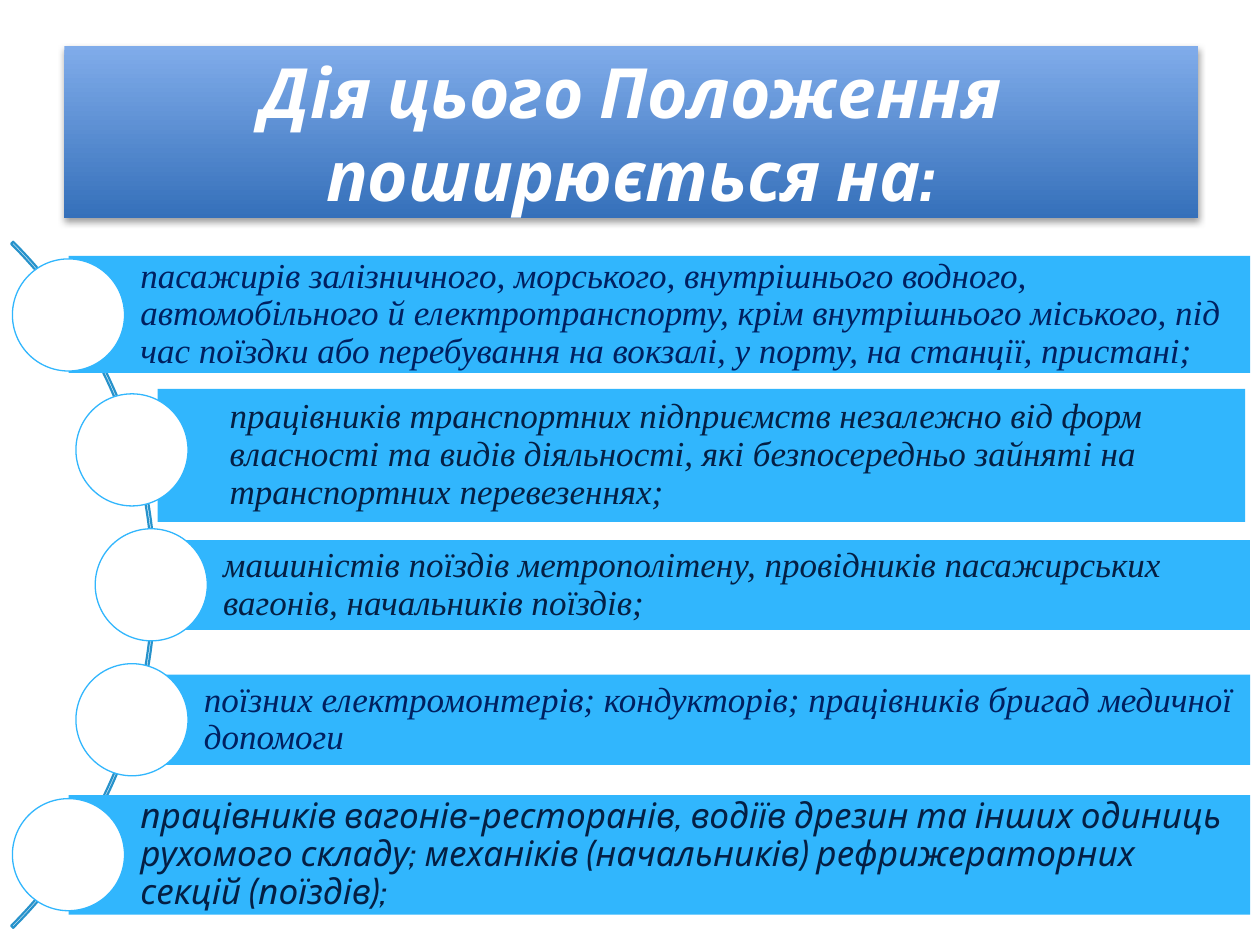
from math import sqrt

from lxml.etree import SubElement
from pptx import Presentation
from pptx.dml.color import RGBColor
from pptx.enum.shapes import MSO_SHAPE as Shape
from pptx.enum.text import MSO_ANCHOR as Anchor, MSO_AUTO_SIZE as AutoSize, PP_ALIGN as Align
from pptx.oxml.ns import qn
from pptx.util import Cm, Pt

TITLE = "Дія цього Положення поширюється на:"
NAVY, DARK = "002060", "041F44"
SERIF, SANS = "Times New Roman", "Cabin"
BLUE, WHITE = "31B6FD", "FFFFFF"

# Text, font, colour, bar top and height in cm
GROUPS = [
    ("пасажирів залізничного, морського, внутрішнього водного, автомобільного й "
     "електротранспорту, крім внутрішнього міського, під час поїздки або перебування "
     "на вокзалі, у порту, на станції, пристані;", SERIF, NAVY, 5.16, 2.36),
    ("працівників транспортних підприємств незалежно від форм власності та видів "
     "діяльності, які безпосередньо зайняті на транспортних перевезеннях;",
     SERIF, DARK, 7.84, 2.68),
    ("машиністів поїздів метрополітену, провідників пасажирських вагонів, "
     "начальників поїздів;", SERIF, DARK, 10.89, 1.81),
    ("поїзних електромонтерів; кондукторів; працівників бригад медичної допомоги",
     SERIF, NAVY, 13.6, 1.82),
    ("працівників вагонів-ресторанів, водіїв дрезин та інших одиниць рухомого складу; "
     "механіків (начальників) рефрижераторних секцій (поїздів);", SANS, DARK, 16.03, 2.41),
]
SHIFTED_BAR = {1: (3.18, 25.1)}  # left and right of the one bar off the common rule

ARC_X, ARC_Y, ARC_RADIUS = -6.65, 11.79, 9.78
TRACK_RADIUS = 9.7
PITCH = 2.72
CIRCLE = 2.26
BAR_RIGHT = 25.2


def rgb(hex_code):
    return RGBColor.from_string(hex_code)


def add_part(kind, left, top, width, height, fill=None, line=None, weight=0.75):
    part = slide.shapes.add_shape(kind, Cm(left), Cm(top), Cm(width), Cm(height))
    part.shadow.inherit = False
    if fill:
        part.fill.solid()
        part.fill.fore_color.rgb = rgb(fill)
    else:
        part.fill.background()
    if line:
        part.line.color.rgb = rgb(line)
        part.line.width = Pt(weight)
    else:
        part.line.fill.background()
    return part


def write(frame, text, font, size, color, align, bold=False):
    frame.word_wrap = True
    frame.auto_size = AutoSize.NONE
    frame.vertical_anchor = Anchor.MIDDLE
    paragraph = frame.paragraphs[0]
    paragraph.alignment = align
    run = paragraph.add_run()
    run.text = text
    run.font.name, run.font.size = font, Pt(size)
    run.font.bold, run.font.italic = bold, True
    run.font.color.rgb = rgb(color)
    return paragraph


def add_drop_shadow(part):
    effects = SubElement(part.element.spPr, qn("a:effectLst"))
    shadow = SubElement(effects, qn("a:outerShdw"), blurRad=str(Pt(4)), dist=str(Pt(2)),
                        dir="5400000", rotWithShape="0")
    color = SubElement(shadow, qn("a:srgbClr"), val="000000")
    SubElement(color, qn("a:alpha"), val="38000")


deck = Presentation()
deck.slide_width, deck.slide_height = Cm(25.4), Cm(19.05)
slide = deck.slides.add_slide(deck.slide_layouts[5])

title = slide.shapes.title
title.left, title.top, title.width, title.height = Cm(1.3), Cm(0.92), Cm(22.86), Cm(3.48)
title.fill.gradient()
title.fill.gradient_angle = 270
for stop, color in zip(title.fill.gradient_stops, ("80ACEA", "3570BA")):
    stop.color.rgb = rgb(color)
add_drop_shadow(title)
write(title.text_frame, TITLE, SANS, 39.6, WHITE, Align.CENTER, bold=True)

arc = add_part(Shape.BLOCK_ARC, ARC_X - ARC_RADIUS, ARC_Y - ARC_RADIUS,
               2 * ARC_RADIUS, 2 * ARC_RADIUS, line="2792CB", weight=1.25)
for index, value in enumerate((189, 27, 0.003)):
    arc.adjustments[index] = value

for index, (text, font, color, top, height) in enumerate(GROUPS):
    rise = (index - len(GROUPS) // 2) * PITCH
    center_x = ARC_X + sqrt(TRACK_RADIUS ** 2 - rise ** 2)
    center_y = ARC_Y + rise

    left, right = SHIFTED_BAR.get(index, (center_x, BAR_RIGHT))
    bar = add_part(Shape.RECTANGLE, left, top, right - left, height, fill=BLUE)
    frame = bar.text_frame
    frame.margin_left = Cm(1.45)
    frame.margin_top = frame.margin_right = frame.margin_bottom = Cm(0.14)
    write(frame, text, font, 20, color, Align.LEFT).line_spacing = 0.9

    add_part(Shape.OVAL, center_x - CIRCLE / 2, center_y - CIRCLE / 2, CIRCLE, CIRCLE,
             fill=WHITE, line=BLUE)

deck.save("out.pptx")
